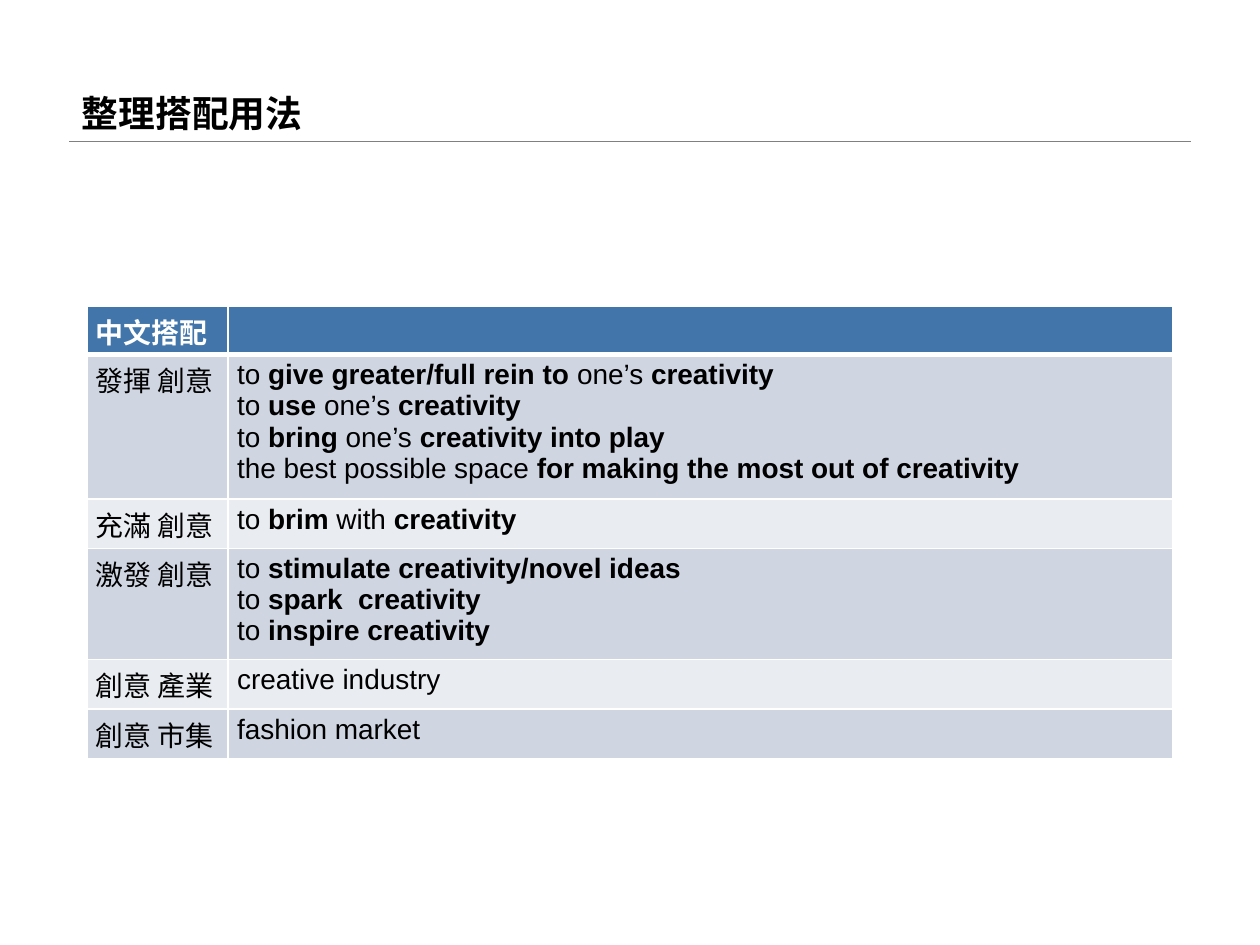
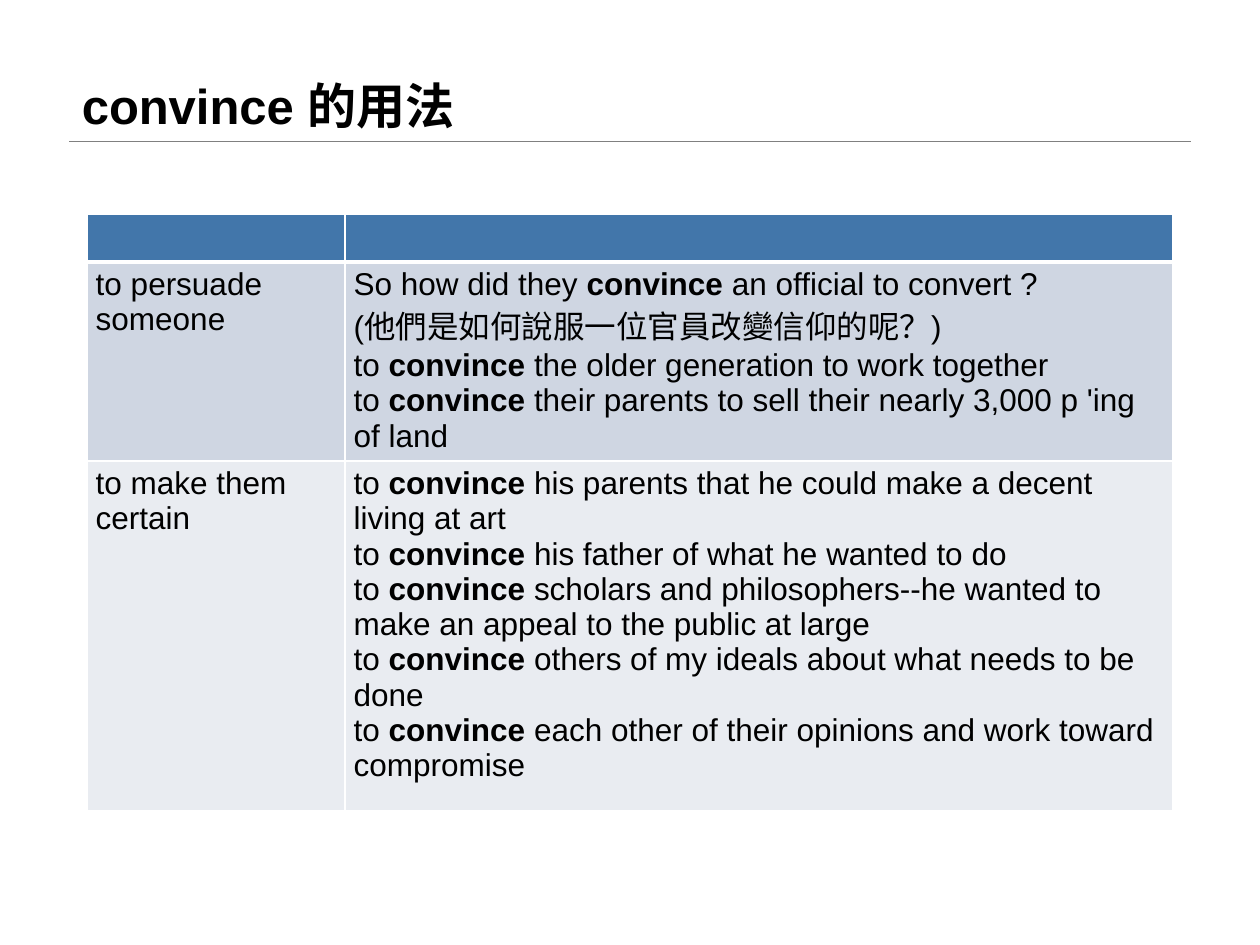
from lxml.etree import SubElement
from pptx import Presentation
from pptx.dml.color import RGBColor
from pptx.enum.shapes import MSO_CONNECTOR
from pptx.enum.text import MSO_ANCHOR
from pptx.oxml.ns import qn
from pptx.util import Cm, Pt

FONT = "Arial"
BLACK = RGBColor(0x00, 0x00, 0x00)
WHITE = RGBColor(0xFF, 0xFF, 0xFF)
GREY = RGBColor(0x80, 0x80, 0x80)
HEADER_BLUE = RGBColor(0x42, 0x76, 0xAA)
BANDS = (RGBColor(0xCF, 0xD6, 0xE2), RGBColor(0xE9, 0xEC, 0xF1))

LEFT, RIGHT, RULE_Y = Cm(1.4), Cm(24), Cm(2.85)
TABLE_LEFT = Cm(1.75)

COLLOCATIONS = [
    ("**中文搭配**", ""),
    ("發揮 創意",
     "to **give greater/full rein to **one’s **creativity**\n"
     "to **use** one’s **creativity**\n"
     "to **bring** one’s **creativity into play**\n"
     "the best possible space **for making the most out of creativity**"),
    ("充滿 創意", "to **brim** with **creativity**"),
    ("激發 創意",
     "to **stimulate creativity/novel ideas**\n"
     "to **spark  creativity**\n"
     "to** inspire creativity**"),
    ("創意 產業", "creative industry"),
    ("創意 市集", "fashion market"),
]

CONVINCE_USES = [
    ("", ""),
    ("to persuade someone",
     "So how did they **convince** an official to convert ?\n"
     "(他們是如何說服一位官員改變信仰的呢？)\n"
     "to **convince** the older generation to work together\n"
     "to **convince** their parents to sell their nearly 3,000 p 'ing of land"),
    ("to make them certain",
     "to **convince** his parents that he could make a decent living at art\n"
     "to **convince** his father of what he wanted to do\n"
     "to **convince** scholars and philosophers--he wanted to make an appeal "
     "to the public at large\n"
     "to **convince** others of my ideals about what needs to be done\n"
     "to **convince** each other of their opinions and work toward compromise"),
]


def style_run(r, size, color, bold):
    """Apply the shared font to a run."""
    r.font.name = FONT
    r.font.size = Pt(size)
    r.font.bold = bold
    r.font.color.rgb = color


def add_title_slide(prs, title, size):
    """Add a blank slide with a title standing on a thin rule."""
    slide = prs.slides.add_slide(prs.slide_layouts[6])
    rule = slide.shapes.add_connector(
        MSO_CONNECTOR.STRAIGHT, LEFT, RULE_Y, RIGHT, RULE_Y)
    rule.line.color.rgb = GREY
    rule.line.width = Pt(0.25)
    SubElement(rule._element.spPr, qn("a:effectLst"))

    tf = slide.shapes.add_textbox(LEFT, 0, RIGHT - LEFT, RULE_Y).text_frame
    tf.word_wrap = True
    tf.vertical_anchor = MSO_ANCHOR.BOTTOM
    p = tf.paragraphs[0]
    p.text = title
    p.line_spacing = 0.9
    style_run(p.runs[0], size, BLACK, True)
    return slide


def set_borders(cell, bottom):
    """Draw white cell borders with the given bottom width in points."""
    tc_pr = cell._tc.get_or_add_tcPr()
    for side, width in (("L", 1), ("R", 1), ("T", 1), ("B", bottom)):
        ln = SubElement(tc_pr, qn(f"a:ln{side}"), w=str(Pt(width)))
        fill = SubElement(ln, qn("a:solidFill"))
        SubElement(fill, qn("a:srgbClr"), val=str(WHITE))


def fill_cell(cell, text, size, color):
    """Write lines into a cell, with **marked** parts in bold."""
    cell.margin_left = cell.margin_right = Cm(0.18)
    cell.margin_top = cell.margin_bottom = Cm(0.1)
    tf = cell.text_frame
    tf.text = text
    for p, line in zip(tf.paragraphs, text.split("\n")):
        p.text = ""
        for i, part in enumerate(line.split("**")):
            if part:
                r = p.add_run()
                r.text = part
                style_run(r, size, color, i % 2 == 1)
        if not line:
            SubElement(p._p, qn("a:endParaRPr"), sz=str(size * 100))


def add_banded_table(slide, rows, top, widths, heights, size):
    """Add a table with a blue header and two alternating row colours."""
    table = slide.shapes.add_table(
        len(rows), len(widths), TABLE_LEFT, Cm(top),
        Cm(sum(widths)), Cm(sum(heights))).table
    table.first_row = table.horz_banding = False
    for column, width in zip(table.columns, widths):
        column.width = Cm(width)
    for i, (texts, height) in enumerate(zip(rows, heights)):
        header = i == 0
        table.rows[i].height = Cm(height)
        for cell, text in zip(table.rows[i].cells, texts):
            fill_cell(cell, text, size, WHITE if header else BLACK)
            set_borders(cell, 3 if header else 1)
            cell.fill.solid()
            cell.fill.fore_color.rgb = HEADER_BLUE if header else BANDS[(i - 1) % 2]


def main():
    """Build and save the two slides."""
    prs = Presentation()
    prs.slide_width, prs.slide_height = Cm(25.4), Cm(19.05)

    slide = add_title_slide(prs, "整理搭配用法", 21)
    add_banded_table(slide, COLLOCATIONS, 6.18, (2.85, 19.05),
                     (0.97, 2.7, 1, 2.06, 1, 1), 16)

    slide = add_title_slide(prs, "convince 的用法", 28)
    add_banded_table(slide, CONVINCE_USES, 4.32, (5.2, 16.7),
                     (0.87, 3.96, 6.58), 18)

    prs.save("out.pptx")


if __name__ == "__main__":
    main()
